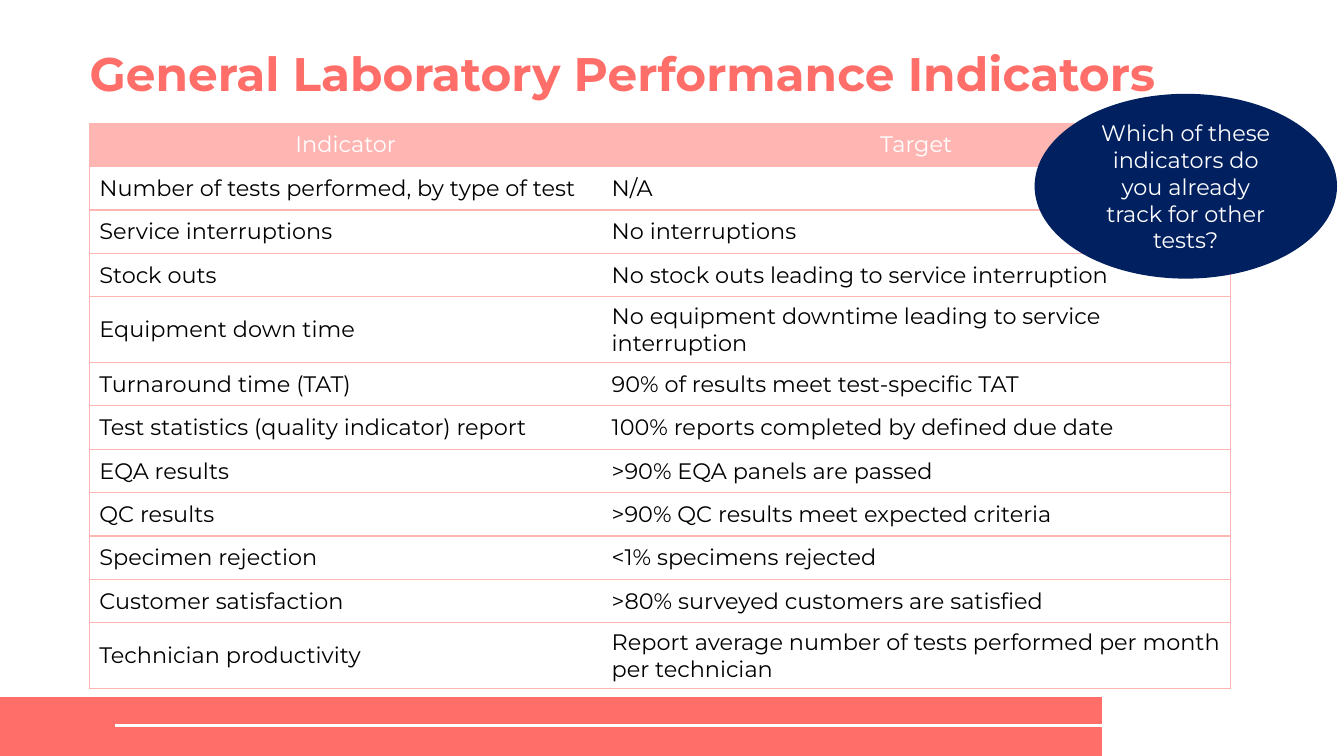
"""Build the laboratory indicators slide."""
from pptx import Presentation as Deck
from pptx.dml.color import RGBColor as Rgb
from pptx.enum.shapes import MSO_CONNECTOR as Link, MSO_SHAPE as Shape
from pptx.enum.text import MSO_ANCHOR as Anchor, MSO_AUTO_SIZE as Auto, PP_ALIGN as Align
from pptx.oxml.ns import qn
from pptx.util import Pt
from lxml.etree import SubElement as Sub

PX = 9525
FONT = "Montserrat"
PLAIN = "{2D5ABB26-0587-4C30-8999-92F81FD0307C}"
HUE = {"coral": "FF6E68", "pink": "FFB6B3", "navy": "002060",
       "white": "FFFFFF", "black": "000000"}
ROWS = [
    ("Indicator", "Target"),
    ("Number of tests performed, by type of test", "N/A"),
    ("Service interruptions", "No interruptions"),
    ("Stock outs", "No stock outs leading to service interruption"),
    ("Equipment down time", "No equipment downtime leading to service interruption"),
    ("Turnaround time (TAT)", "90% of results meet test-specific TAT"),
    ("Test statistics (quality indicator) report", "100% reports completed by defined due date"),
    ("EQA results", ">90% EQA panels are passed"),
    ("QC results", ">90% QC results meet expected criteria"),
    ("Specimen rejection", "<1% specimens rejected"),
    ("Customer satisfaction", ">80% surveyed customers are satisfied"),
    ("Technician productivity",
     "Report average number of tests performed per month per technician"),
]
TALL = {4: 47, 11: 47}


def emu(*px):
    """Turn px lengths into EMU."""
    return [n * PX for n in px]


def tint(name):
    """Give the named colour."""
    return Rgb.from_string(HUE[name])


def write(frame, text, hue="black", size=12, bold=False, align=Align.LEFT, space=None):
    """Put formatted text in a frame."""
    para = frame.paragraphs[0]
    para.alignment, para.line_spacing = align, space
    run = para.add_run()
    run.text = text
    font = run.font
    font.name, font.size, font.bold = FONT, Pt(size), bold
    font.color.rgb = tint(hue)


def inset(frame, wide, high):
    """Set the margins of a frame or cell."""
    frame.margin_left = frame.margin_right = wide * PX
    frame.margin_top = frame.margin_bottom = high * PX


def solid(slide, kind, box, hue):
    """Add a flat shape without outline."""
    shape = slide.shapes.add_shape(kind, *emu(*box))
    shape.shadow.inherit = False
    shape.fill.solid()
    shape.fill.fore_color.rgb = tint(hue)
    shape.line.fill.background()
    return shape


def edge(cell, sides):
    """Draw pink borders on the given sides of a cell."""
    props = cell._tc.get_or_add_tcPr()
    for side in sides:
        line = Sub(props, qn(f"a:ln{side}"), w=str(Pt(0.75)))
        Sub(Sub(line, qn("a:solidFill")), qn("a:srgbClr"), val=HUE["pink"])


def footer(slide, x, y, wide, high):
    """Add the bottom band with its white rule."""
    solid(slide, Shape.RECTANGLE, (x, y, wide, high), "coral")
    ends = emu(x + wide + 6, y + 20, x + 82, y + 20)
    rule = slide.shapes.add_connector(Link.STRAIGHT, *ends)
    rule.line.color.rgb = tint("white")
    rule.line.width = Pt(1.5)
    Sub(rule._element.spPr, qn("a:effectLst"))


def header(slide, *box):
    """Place the slide title."""
    title = slide.shapes.title
    title.left, title.top, title.width, title.height = emu(*box)
    frame = title.text_frame
    frame.auto_size, frame.vertical_anchor = Auto.NONE, Anchor.BOTTOM
    inset(frame, 0, 0)
    write(frame, "General Laboratory Performance Indicators", "coral", 25.2,
          bold=True, align=Align.LEFT, space=0.9)


def grid(slide, x, y, cols, step):
    """Add the table of indicators and targets."""
    highs = [TALL.get(i, step) for i in range(len(ROWS))]
    box = emu(x, y, sum(cols), sum(highs))
    table = slide.shapes.add_table(len(ROWS), len(cols), *box).table
    table.horz_banding = False
    table._tbl.tblPr.find(qn("a:tableStyleId")).text = PLAIN
    for col, wide in zip(table.columns, cols):
        col.width = wide * PX
    for i, (texts, high) in enumerate(zip(ROWS, highs)):
        table.rows[i].height = high * PX
        for j, text in enumerate(texts):
            cell = table.cell(i, j)
            cell.vertical_anchor = Anchor.MIDDLE
            inset(cell, 7, 3)
            top = "T" if i == 0 or i % 2 else ""
            base = "B" if i == len(ROWS) - 1 else ""
            edge(cell, "LR"[j] + top + base)
            if i == 0:
                cell.fill.solid()
                cell.fill.fore_color.rgb = tint("pink")
                write(cell.text_frame, text, "white", align=Align.CENTER)
            else:
                cell.fill.background()
                write(cell.text_frame, text)


def prompt(slide, *box):
    """Add the oval with the question."""
    frame = solid(slide, Shape.OVAL, box, "navy").text_frame
    frame.word_wrap, frame.vertical_anchor = True, Anchor.MIDDLE
    inset(frame, 10, 5)
    write(frame, "Which of these indicators do you already track for other tests?",
          "white", align=Align.CENTER)


def main():
    """Build and save the deck."""
    deck = Deck()
    deck.slide_width, deck.slide_height = emu(960, 540)
    slide = deck.slides.add_slide(deck.slide_layouts[5])
    footer(slide, 0, 498, 787, 42)
    header(slide, 64, 3, 807, 70)
    grid(slide, 64, 88, (366, 449), 31)
    prompt(slide, 739, 67, 216, 132)
    deck.save("out.pptx")


if __name__ == "__main__":
    main()
